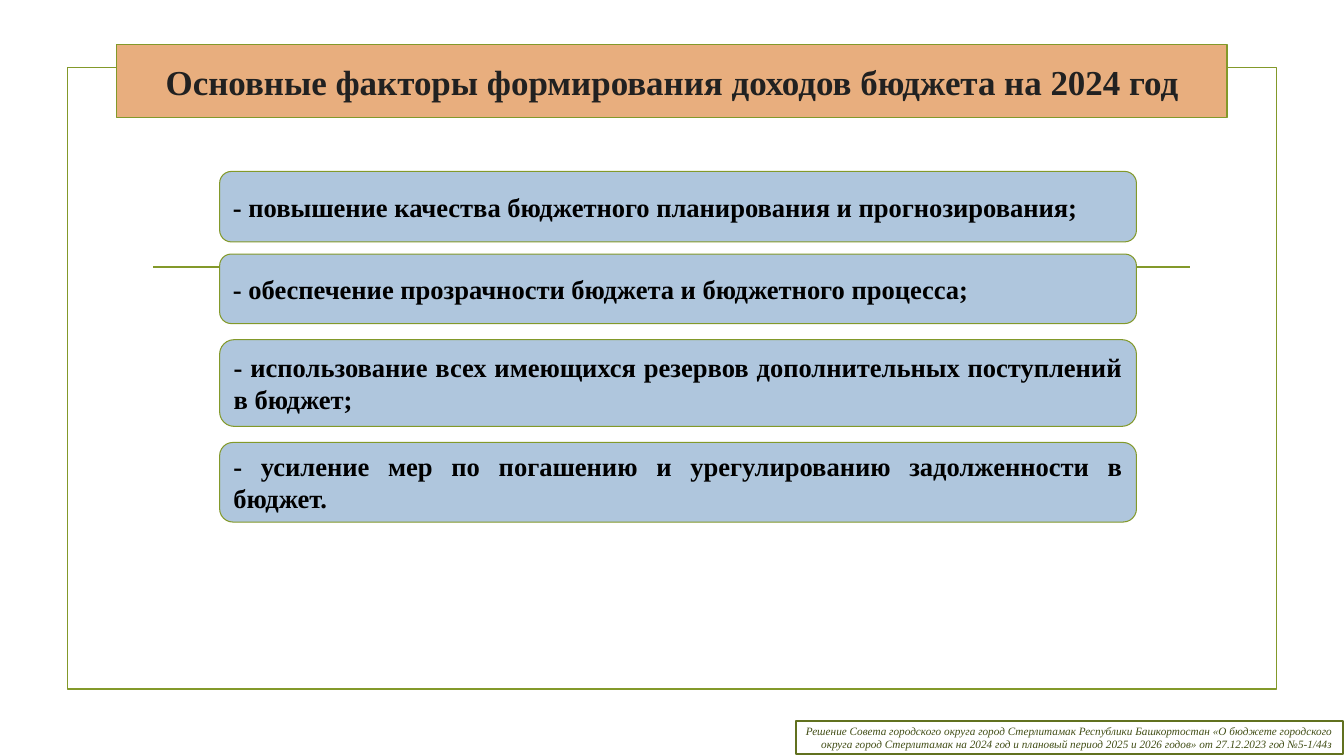
from pptx import Presentation
from pptx.dml.color import RGBColor
from pptx.enum.shapes import MSO_CONNECTOR, MSO_SHAPE
from pptx.enum.text import MSO_ANCHOR, PP_ALIGN
from pptx.oxml.ns import qn
from pptx.util import Inches, Pt

WIDTH, HEIGHT = Inches(13.34), Inches(7.5)
GREEN, OLIVE, DARK_OLIVE = "83992A", "61711F", "414D15"
ORANGE, BLUE, INK, BLACK = "E8AE7E", "AFC6DD", "212121", "000000"

TITLE = "Основные факторы формирования доходов бюджета на 2024 год"
FACTORS = [
    ("- повышение качества бюджетного планирования и прогнозирования;", 0, 9.33),
    ("- обеспечение прозрачности бюджета и бюджетного процесса;", 1.6, 9.2),
    ("- использование всех имеющихся резервов дополнительных поступлений в бюджет;", 2.13, 11.47),
    ("- усиление мер по погашению и урегулированию задолженности в бюджет.", 2.13, 10.53),
]
SOURCE = [
    "Решение Совета городского округа город Стерлитамак Республики Башкортостан «О бюджете городского",
    "округа город Стерлитамак на 2024 год и плановый период 2025 и 2026 годов» от 27.12.2023 год №5-1/44з",
]


def rgb(value):
    """Turn a hex string into a colour."""
    return RGBColor.from_string(value)


def col(share):
    """Convert a percentage of the slide width to a length."""
    return round(WIDTH * share / 100)


def row(share):
    """Convert a percentage of the slide height to a length."""
    return round(HEIGHT * share / 100)


def add_box(slide, box, line, weight, fill=None, kind=MSO_SHAPE.RECTANGLE):
    """Add an outlined shape at a box given in percent of the slide."""
    x, y, w, h = box
    sp = slide.shapes.add_shape(kind, col(x), row(y), col(w), row(h))
    sp.shadow.inherit = False
    sp.line.color.rgb, sp.line.width = rgb(line), Pt(weight)
    if fill:
        sp.fill.solid()
        sp.fill.fore_color.rgb = rgb(fill)
    else:
        sp.fill.background()
    return sp


def write(sp, lines, align, color, **formats):
    """Write one paragraph per line, centred vertically in the shape."""
    tf = sp.text_frame
    tf.word_wrap, tf.vertical_anchor = True, MSO_ANCHOR.MIDDLE
    for i, line in enumerate(lines):
        p = tf.paragraphs[0] if i == 0 else tf.add_paragraph()
        p.alignment = align
        r = p.add_run()
        r.text = line
        r.font.color.rgb = rgb(color)
        for name, value in {"name": "Times New Roman", **formats}.items():
            setattr(r.font, name, value)


def add_frame(slide, box):
    """Draw the page border and the rule across its upper part."""
    x, y, w, h = box
    add_box(slide, box, GREEN, 1.25)
    inset, rule = 6.4, row(y + 26.4)
    line = slide.shapes.add_connector(
        MSO_CONNECTOR.STRAIGHT, col(x + inset), rule, col(x + w - inset), rule)
    line.line.color.rgb, line.line.width = rgb(GREEN), Pt(1.25)
    sp_pr = line._element.spPr
    sp_pr.append(sp_pr.makeelement(qn("a:effectLst"), {}))


def add_title(slide, box):
    """Draw the title banner."""
    sp = add_box(slide, box, GREEN, 0.75, ORANGE)
    write(sp, [TITLE], PP_ALIGN.CENTER, INK, size=Pt(25), bold=True)


def add_factors(slide, x, y, w):
    """Stack the factor cards downwards from the given corner."""
    for text, gap, h in FACTORS:
        y += gap
        sp = add_box(slide, (x, y, w, h), GREEN, 0.75, BLUE, MSO_SHAPE.ROUNDED_RECTANGLE)
        write(sp, [text], PP_ALIGN.JUSTIFY, BLACK, size=Pt(19), bold=True)
        y += h


def add_source(slide, box):
    """Draw the boxed reference to the budget decision."""
    sp = add_box(slide, box, OLIVE, 1.25)
    write(sp, SOURCE, PP_ALIGN.RIGHT, DARK_OLIVE, size=Pt(8), italic=True)


def main():
    """Build the slide and save it."""
    prs = Presentation()
    prs.slide_width, prs.slide_height = WIDTH, HEIGHT
    slide = prs.slides.add_slide(prs.slide_layouts[6])
    add_frame(slide, (5.02, 8.93, 89.96, 82.27))
    add_title(slide, (8.7, 5.87, 82.6, 9.73))
    add_factors(slide, 16.34, 22.67, 68.22)
    add_source(slide, (59.22, 95.33, 40.7, 4.4))
    prs.save("out.pptx")


if __name__ == "__main__":
    main()
